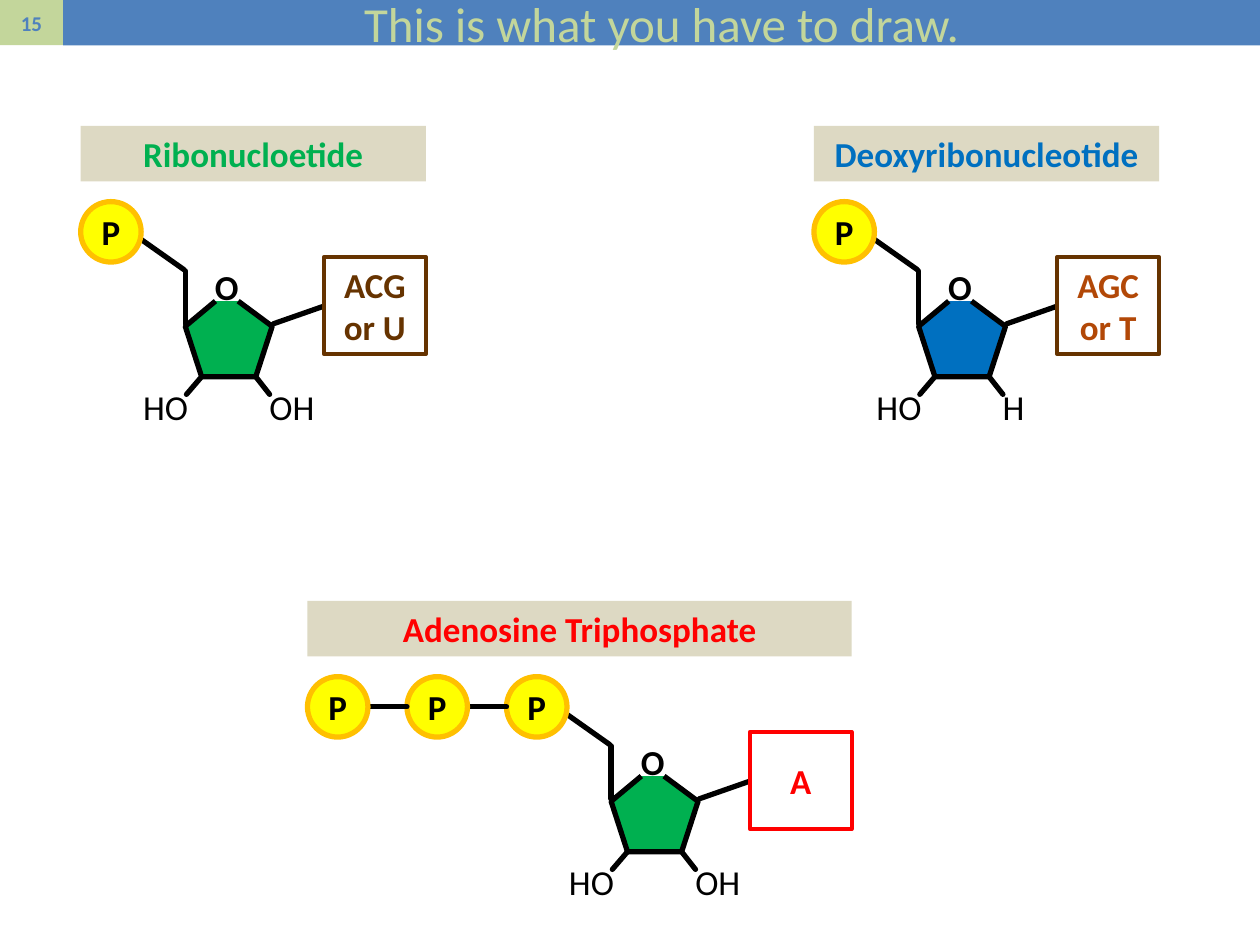
from dataclasses import dataclass

from lxml import etree
from pptx import Presentation
from pptx.dml.color import RGBColor
from pptx.enum.shapes import MSO_CONNECTOR, MSO_SHAPE
from pptx.enum.text import MSO_ANCHOR, MSO_AUTO_SIZE, PP_ALIGN
from pptx.oxml.ns import qn
from pptx.util import Inches, Pt

RECT, OVAL = MSO_SHAPE.RECTANGLE, MSO_SHAPE.OVAL
STRAIGHT = MSO_CONNECTOR.STRAIGHT
TOP, MIDDLE = MSO_ANCHOR.TOP, MSO_ANCHOR.MIDDLE
LEFT, CENTER = PP_ALIGN.LEFT, PP_ALIGN.CENTER
NO_FIT = MSO_AUTO_SIZE.NONE

FONT = "Calibri"
COLORS = {
    "bar": "4F81BD", "lime": "C3D69B", "tan": "DDD9C3",
    "black": "000000", "white": "FFFFFF", "red": "FF0000",
    "green": "00B050", "blue": "0070C0", "brown": "663300", "rust": "B24807",
    "yellow": "FFFF00", "amber": "FFC000",
}

# Molecule geometry in inches, measured from the corner of the phosphate
# that is joined to the sugar
PHOSPHATE_SIZE = 0.48
PHOSPHATE_STEP = 0.79
HEADER_WIDTH = 2.74
RING = [(1.25, 0.79), (1.52, 0.99), (1.39, 1.39),
        (0.96, 1.39), (0.83, 0.99), (1.07, 0.79)]
BONDS = [
    ((0.83, 0.97), (0.83, 0.55)),  # ring to carbon 5
    ((0.82, 0.54), (0.48, 0.30)),  # carbon 5 to phosphate
    ((1.93, 0.83), (1.53, 0.97)),  # ring to base
    ((0.96, 1.39), (0.84, 1.53)),  # carbon 3
    ((1.39, 1.39), (1.50, 1.53)),  # carbon 2
]


@dataclass
class Nucleotide:
    name: str
    name_color: str
    x: float
    y: float
    sugar: str
    base: str
    base_color: str
    base_line: str
    carbon2: str
    phosphates: int = 1


NUCLEOTIDES = [
    Nucleotide("Deoxyribonucleotide", "blue", 6.46, 1.6, "blue",
               "AGC or T", "rust", "brown", "H"),
    Nucleotide("Adenosine Triphosphate", "red", 4.02, 5.37, "green",
               "A", "red", "red", "OH", phosphates=3),
    Nucleotide("Ribonucloetide", "green", 0.64, 1.6, "green",
               "ACG\vor U", "brown", "brown", "OH"),
]


def rgb(name: str) -> RGBColor:
    return RGBColor.from_string(COLORS[name])


def write(s, text: str, color: str, size: float = 20, bold: bool = True,
          align=CENTER, anchor=MIDDLE, wrap: bool = True) -> None:
    tf = s.text_frame
    tf.text = text
    tf.word_wrap = wrap
    tf.auto_size = NO_FIT
    tf.vertical_anchor = anchor
    p = tf.paragraphs[0]
    p.alignment = align
    for r in p.runs:
        r.font.name, r.font.size, r.font.bold = FONT, Pt(size), bold
        r.font.color.rgb = rgb(color)


def paint(s, fill: str, line: str = "", width: float = 3) -> None:
    s.shadow.inherit = False
    s.fill.solid()
    s.fill.fore_color.rgb = rgb(fill)
    if line:
        s.line.color.rgb = rgb(line)
        s.line.width = Pt(width)
    else:
        s.line.fill.background()


def add_box(shapes, kind, x: float, y: float, w: float, h: float,
            fill: str, line: str = "", width: float = 3):
    s = shapes.add_shape(kind, Inches(x), Inches(y), Inches(w), Inches(h))
    paint(s, fill, line, width)
    return s


def add_label(shapes, text: str, x: float, y: float, w: float,
              bold: bool = False, align=CENTER) -> None:
    s = shapes.add_textbox(Inches(x), Inches(y), Inches(w), Inches(0.44))
    write(s, text, "black", bold=bold, align=align, anchor=TOP)


def add_bond(shapes, x1: float, y1: float, x2: float, y2: float) -> None:
    s = shapes.add_connector(STRAIGHT, Inches(x1), Inches(y1),
                             Inches(x2), Inches(y2))
    s.line.color.rgb = rgb("black")
    s.line.width = Pt(3)
    sp_pr = s.element.spPr
    sp_pr.get_or_add_ln().set("cap", "rnd")
    etree.SubElement(sp_pr, qn("a:effectLst"))


def add_nucleotide(slide, n: Nucleotide) -> None:
    shapes = slide.shapes.add_group_shape().shapes
    x, y = n.x, n.y
    chain = (n.phosphates - 1) * PHOSPHATE_STEP

    # Name
    s = add_box(shapes, RECT, x - chain, y - 0.6,
                HEADER_WIDTH + chain, 0.44, "tan")
    write(s, n.name, n.name_color)

    # Sugar ring with its oxygen
    points = [(Inches(x + dx), Inches(y + dy)) for dx, dy in RING]
    builder = shapes.build_freeform(*points[0])
    builder.add_line_segments(points[1:], close=False)
    paint(builder.convert_to_shape(), n.sugar, "black")
    add_label(shapes, "O", x + 0.94, y + 0.46, 0.44, bold=True)

    # Bonds and hydroxyl ends
    for (x1, y1), (x2, y2) in BONDS:
        add_bond(shapes, x + x1, y + y1, x + x2, y + y2)
    add_label(shapes, "HO", x + 0.36, y + 1.41, 0.63)
    add_label(shapes, n.carbon2, x + 1.4, y + 1.41, 0.63, align=LEFT)

    # Phosphate chain
    for i in range(n.phosphates):
        left = x - i * PHOSPHATE_STEP
        if i:
            mid = y + PHOSPHATE_SIZE / 2
            add_bond(shapes, left + PHOSPHATE_SIZE, mid,
                     left + PHOSPHATE_STEP, mid)
        s = add_box(shapes, OVAL, left, y, PHOSPHATE_SIZE, PHOSPHATE_SIZE,
                    "yellow", "amber")
        write(s, "P", "black", wrap=False)

    # Base
    s = add_box(shapes, RECT, x + 1.93, y + 0.44, 0.81, 0.77,
                "white", n.base_line, 2.25)
    write(s, n.base, n.base_color)


def main() -> None:
    prs = Presentation()
    prs.slide_width, prs.slide_height = Inches(10), Inches(7.5)
    slide = prs.slides.add_slide(prs.slide_layouts[5])

    # Title bar and page number
    title = slide.shapes.title
    title.left, title.top = Inches(0.5), Inches(0)
    title.width, title.height = Inches(9.5), Inches(0.36)
    title.fill.solid()
    title.fill.fore_color.rgb = rgb("bar")
    write(title, "This is what you have to draw.", "lime", 28, bold=False)
    number = add_box(slide.shapes, RECT, 0, 0, 0.5, 0.36, "lime")
    write(number, "15", "bar", 12)

    for n in NUCLEOTIDES:
        add_nucleotide(slide, n)
    prs.save("out.pptx")


if __name__ == "__main__":
    main()
